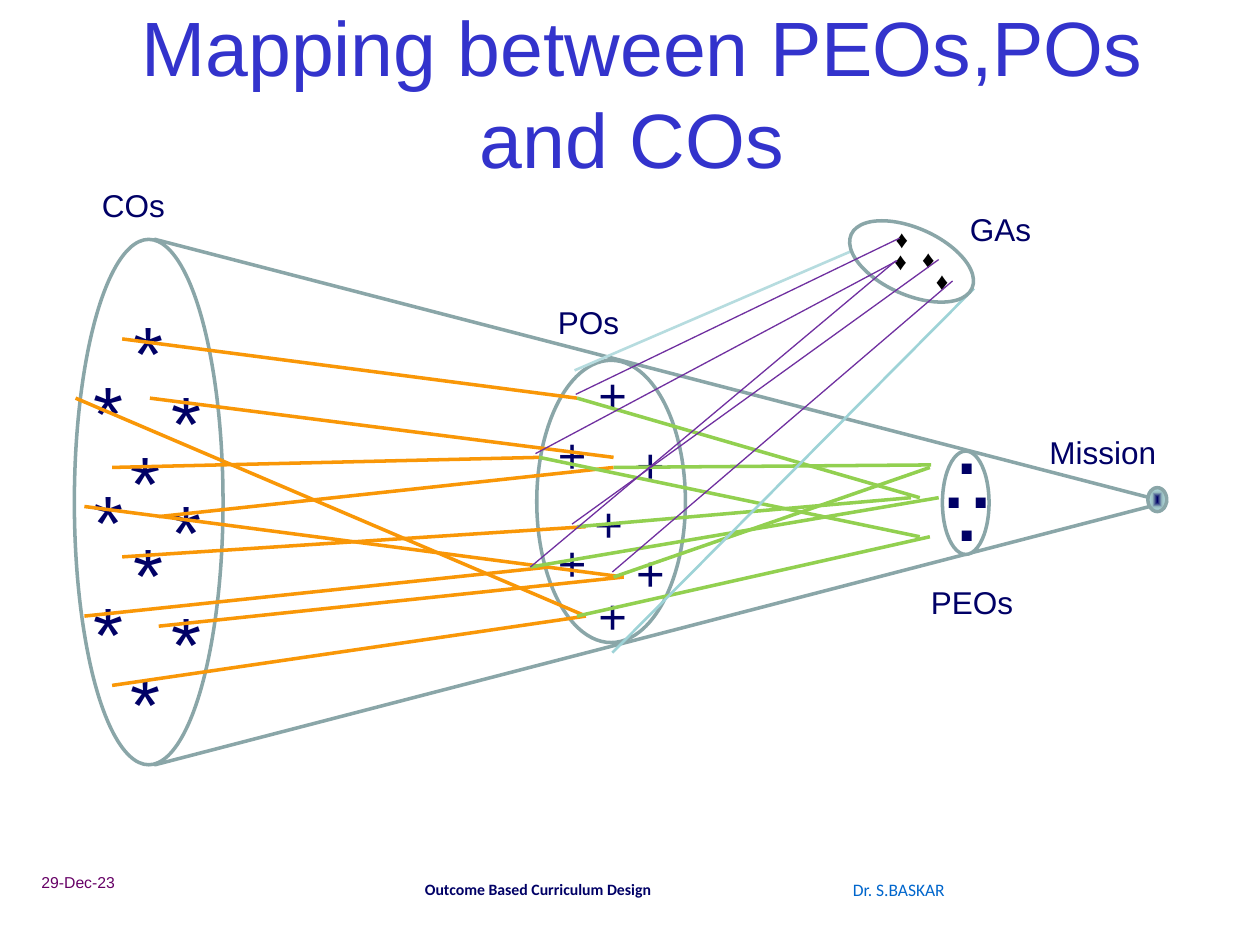
import pptx
import pptx.dml.color
import pptx.enum.shapes
import pptx.enum.text
import pptx.oxml
import pptx.oxml.ns
import pptx.util
from lxml import etree

NAVY, GREY, WHITE = "000066", "8AA6A8", "FFFFFF"
ORANGE, GREEN, PURPLE = "F99707", "92D050", "7030A0"

TITLE = (0.5, 0.16, 9.03, 1.14, " Mapping between PEOs,POs and COs")
FOOTERS = [
    (1.93, 6.93, 4.65, 0.25, " Outcome Based Curriculum Design", "Calibri", 9, NAVY, True, "CENTER"),
    (6.67, 6.93, 1.21, 0.27, "Dr. S.BASKAR", "Calibri", 10, "0066CC", False, "LEFT"),
    (0.23, 6.88, 1.88, 0.27, "29-Dec-23", "Arial", 9, "660066", False, "LEFT"),
]
CONE = (3.16, -0.03, 4.17, 8.03, 90)
SETS = [
    (0.59, 1.9, 1.18, 4.17, 0),
    (4.26, 2.86, 1.18, 2.24, 0),
    (7.48, 3.58, 0.37, 0.82, 0),
]
MISSION = (9.11, 3.87, 0.15, 0.19, 0)
GA_SET = (6.97, 1.55, 0.53, 1.05, 294)
MISSION_STOPS = [(0, NAVY), (50, "9BBFC2"), (100, "B8E3E6")]

MARKERS = [
    ("*", 44, False, 0.41, 0.84, [
        (0.96, 2.37), (1.26, 2.92), (0.64, 2.84), (0.94, 3.4), (0.96, 4.13),
        (1.26, 4.68), (0.64, 4.6), (0.94, 5.15), (1.26, 3.79), (0.64, 3.71)]),
    ("+", 28, False, 0.4, 0.57, [
        (4.65, 2.84), (4.95, 3.4), (4.33, 3.32), (4.62, 3.87),
        (4.65, 4.6), (4.95, 4.26), (4.33, 4.18)]),
    (".", 40, True, 0.33, 0.77, [(7.5, 3.16), (7.5, 3.69), (7.61, 3.43), (7.4, 3.43)]),
]
DIAMONDS = [(7.01, 1.73), (7, 1.9), (7.22, 1.89), (7.33, 2.06)]
LABELS = [
    ("PEOs", 7.29, 4.58, 0.89),
    ("POs", 4.33, 2.36, 0.88),
    ("COs", 0.71, 1.43, 0.88),
    ("Mission", 8.23, 3.39, 1.18),
    ("GAs", 7.6, 1.62, 0.83),
]
CO_PO_GA_LINES = [
    (ORANGE, 2, [
        (0.97, 2.69, 4.58, 3.16), (1.26, 4.1, 4.87, 3.71), (0.67, 4.89, 4.36, 4.5),
        (0.89, 3.71, 4.28, 3.63), (0.97, 4.42, 4.65, 4.18), (0.89, 5.44, 4.65, 4.89),
        (1.26, 4.97, 4.95, 4.58), (0.6, 3.16, 4.65, 4.89), (1.19, 3.16, 4.87, 3.63),
        (0.67, 4.02, 4.95, 4.58)]),
    (GREEN, 2, [
        (4.87, 3.71, 7.39, 3.69), (4.58, 3.16, 7.3, 3.95), (4.58, 4.18, 7.23, 3.95),
        (4.58, 4.89, 7.38, 4.26), (4.21, 4.5, 7.45, 3.95), (4.28, 3.63, 7.3, 4.26),
        (4.87, 4.58, 7.38, 3.71)]),
    ("9ED3D7", 1.5, [(4.86, 5.18, 7.73, 2.29)]),
    ("B6DCDF", 1.5, [(4.56, 2.94, 6.95, 1.91)]),
]
GA_PO_LINES = [(PURPLE, 0.75, [
    (7.14, 1.89, 4.57, 3.13), (7.12, 2.07, 4.25, 3.6), (7.45, 2.06, 4.54, 4.16),
    (7.11, 2.07, 4.21, 4.5), (7.56, 2.23, 4.86, 4.54)])]


def rgb(color):
    return pptx.dml.color.RGBColor.from_string(color)


def inches(*values):
    return [pptx.util.Cm(v * 2.54) for v in values]


def add_text(s, x, y, w, h, text, font="Arial", size=18, color=NAVY, bold=False,
             align="LEFT", wrap=True, anchor="TOP"):
    tf = s.shapes.add_textbox(*inches(x, y, w, h)).text_frame
    tf.word_wrap = wrap
    tf.vertical_anchor = getattr(pptx.enum.text.MSO_ANCHOR, anchor)
    p = tf.paragraphs[0]
    p.alignment = getattr(pptx.enum.text.PP_ALIGN, align)
    r = p.add_run()
    r.text = text
    r.font.name, r.font.size, r.font.bold = font, pptx.util.Pt(size), bold
    r.font.color.rgb = rgb(color)


def add_outline(s, kind, x, y, w, h, rotation):
    sp = s.shapes.add_shape(getattr(pptx.enum.shapes.MSO_SHAPE, kind), *inches(x, y, w, h))
    sp.rotation = rotation
    sp.shadow.inherit = False
    sp.fill.solid()
    sp.fill.fore_color.rgb = rgb(WHITE)
    sp.line.color.rgb = rgb(GREY)
    sp.line.width = pptx.util.Pt(2)
    return sp


def fill_from_centre(sp, stops):
    gs = "".join(f'<a:gs pos="{pos * 1000}"><a:srgbClr val="{color}"/></a:gs>' for pos, color in stops)
    grad = pptx.oxml.parse_xml(
        f'<a:gradFill {pptx.oxml.ns.nsdecls("a")}><a:gsLst>{gs}</a:gsLst><a:path path="shape">'
        '<a:fillToRect l="50000" t="50000" r="50000" b="50000"/></a:path></a:gradFill>')
    spPr = sp.element.spPr
    spPr.replace(spPr.find(pptx.oxml.ns.qn("a:solidFill")), grad)


def add_lines(s, groups):
    for color, width, ends in groups:
        for end in ends:
            line = s.shapes.add_connector(pptx.enum.shapes.MSO_CONNECTOR.STRAIGHT, *inches(*end))
            line.line.color.rgb = rgb(color)
            line.line.width = pptx.util.Pt(width)
            etree.SubElement(line.element.spPr, pptx.oxml.ns.qn("a:effectLst"))


def main():
    prs = pptx.Presentation()
    prs.slide_width, prs.slide_height = inches(10, 7.5)
    s = prs.slides.add_slide(prs.slide_layouts[6])

    for footer in FOOTERS:
        add_text(s, *footer)
    add_text(s, *TITLE, size=44, color="3333CC", align="CENTER", anchor="MIDDLE")

    add_outline(s, "ISOSCELES_TRIANGLE", *CONE)
    for ellipse in SETS:
        add_outline(s, "OVAL", *ellipse)
    fill_from_centre(add_outline(s, "OVAL", *MISSION), MISSION_STOPS)

    for symbol, size, bold, w, h, places in MARKERS:
        for x, y in places:
            add_text(s, x, y, w, h, symbol, size=size, bold=bold, align="CENTER", wrap=False)
    for label, x, y, w in LABELS:
        add_text(s, x, y, w, 0.4, label)

    add_lines(s, CO_PO_GA_LINES)
    add_outline(s, "OVAL", *GA_SET)
    for x, y in DIAMONDS:
        add_text(s, x, y, 0.23, 0.34, "♦", size=14, color="000000")
    add_lines(s, GA_PO_LINES)

    prs.save("out.pptx")


if __name__ == "__main__":
    main()
